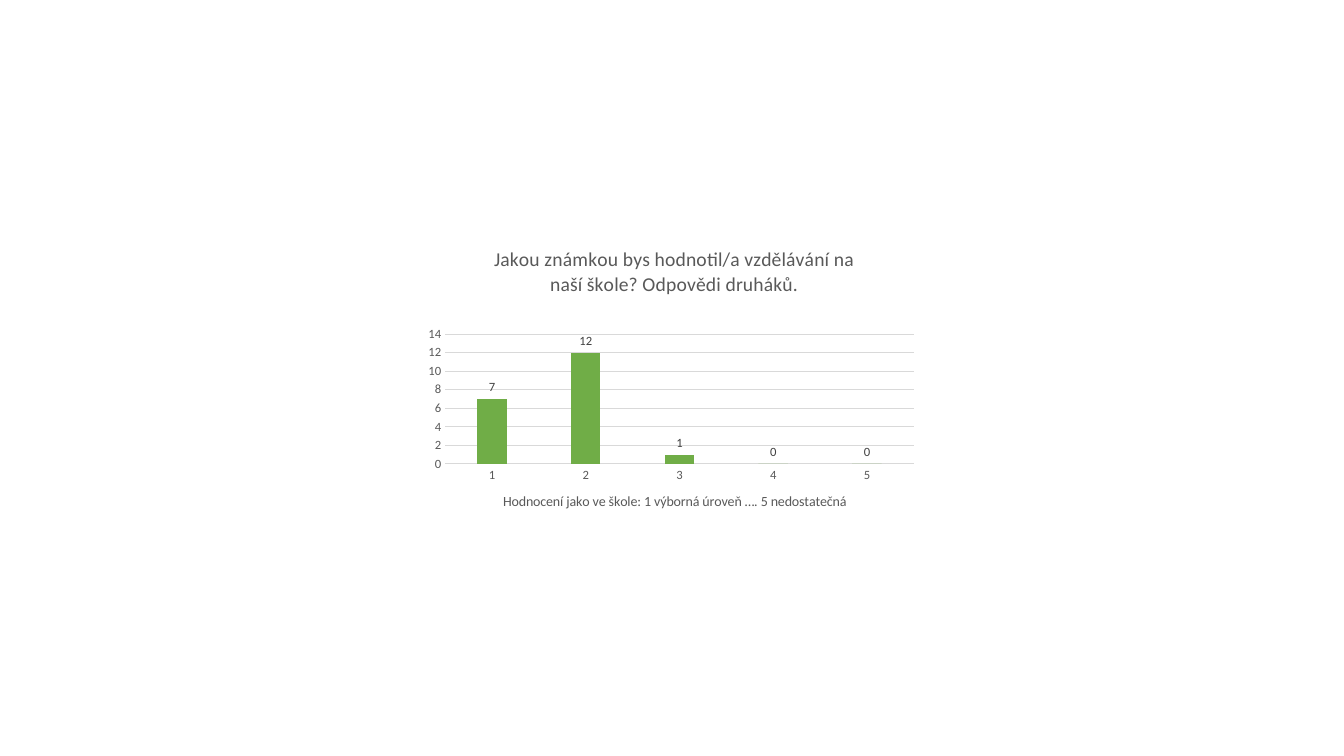
from pptx import Presentation
from pptx.chart.data import CategoryChartData
from pptx.dml.color import RGBColor
from pptx.enum.chart import XL_CHART_TYPE as CT, XL_LABEL_POSITION as LP, XL_TICK_MARK as TM
from pptx.oxml import parse_xml
from pptx.oxml.ns import nsdecls, qn
from pptx.util import Emu, Pt

EMU_PER_PX = 914400 / 100.8
FONT = "Calibri"
COLORS = {"text": "595959", "label": "404040", "grid": "D9D9D9", "bar": "70AD47"}


def px(n):
    return Emu(round(n * EMU_PER_PX))


def rgb(name):
    return RGBColor.from_string(COLORS[name])


def style_font(font, size, color="text"):
    font.name = FONT
    font.size = Pt(size)
    font.bold = False
    font.color.rgb = rgb(color)


def style_line(line):
    line.color.rgb = rgb("grid")
    line.width = Pt(0.75)


def set_layout(el, inner=False, **fractions):
    target = '<c:layoutTarget val="inner"/>' if inner else ""
    modes = "".join(f'<c:{k}Mode val="edge"/>' for k in "xy")
    values = "".join(f'<c:{k} val="{v}"/>' for k, v in fractions.items())
    layout = parse_xml(
        f'<c:layout {nsdecls("c")}><c:manualLayout>{target}{modes}{values}'
        "</c:manualLayout></c:layout>"
    )
    old = el.find(qn("c:layout"))
    if old is None:
        el.insert(0, layout)
    else:
        el.replace(old, layout)


def set_title(title, text, size, x, y):
    p = title.text_frame.paragraphs[0]
    p.text = text
    style_font(p.font, size)
    set_layout(title.element, x=x, y=y)


def style_axis(axis):
    axis.major_tick_mark = axis.minor_tick_mark = TM.NONE
    style_font(axis.tick_labels.font, 9)


def add_grades_chart(s):
    data = CategoryChartData()
    data.categories = ["1", "2", "3", "4", "5"]
    data.add_series("Series 1", [7, 12, 1, 0, 0])
    frame = s.shapes.add_chart(
        CT.COLUMN_CLUSTERED, px(420), px(227), px(504), px(302), data
    )
    chart = frame.chart
    chart.has_legend = False
    style_font(chart.font, 10)
    set_title(
        chart.chart_title,
        "Jakou známkou bys hodnotil/a vzdělávání na naší škole? Odpovědi druháků.",
        14, 0.14, 0.05,
    )
    set_layout(chart.element.find(".//" + qn("c:plotArea")),
               inner=True, x=0.05, y=0.355, w=0.93, h=0.43)

    cat, val = chart.category_axis, chart.value_axis
    for axis in (cat, val):
        style_axis(axis)
    style_line(cat.format.line)
    set_title(cat.axis_title,
              "Hodnocení jako ve škole: 1 výborná úroveň …. 5 nedostatečná",
              10, 0.16, 0.87)
    val.minimum_scale, val.maximum_scale, val.major_unit = 0, 14, 2
    val.format.line.fill.background()
    style_line(val.major_gridlines.format.line)

    plot = chart.plots[0]
    plot.vary_by_categories = False
    plot.gap_width, plot.overlap = 219, -27
    bars = plot.series[0]
    bars.format.fill.solid()
    bars.format.fill.fore_color.rgb = rgb("bar")
    labels = bars.data_labels
    labels.show_value = True
    labels.position = LP.OUTSIDE_END
    style_font(labels.font, 9, "label")


def main():
    prs = Presentation()
    prs.slide_width, prs.slide_height = px(1344), px(756)
    s = prs.slides.add_slide(prs.slide_layouts[6])
    add_grades_chart(s)
    prs.save("out.pptx")


if __name__ == "__main__":
    main()
